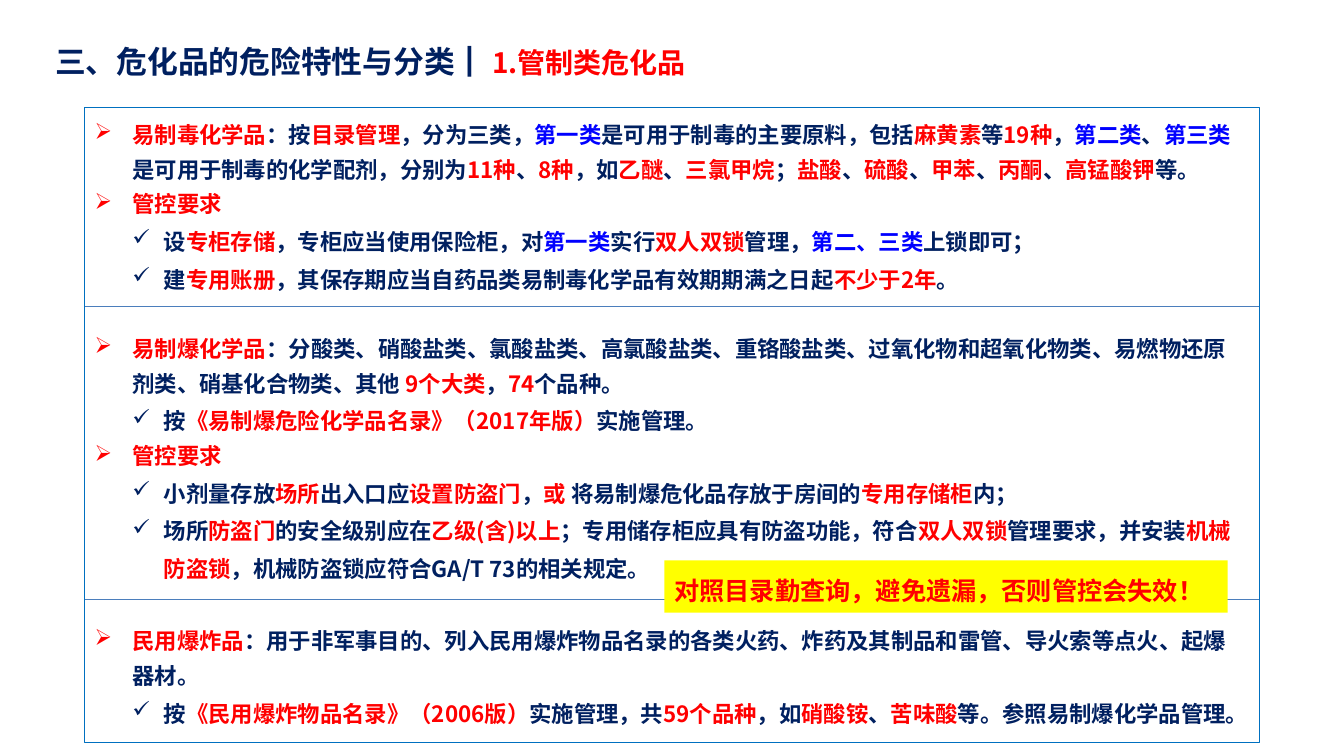
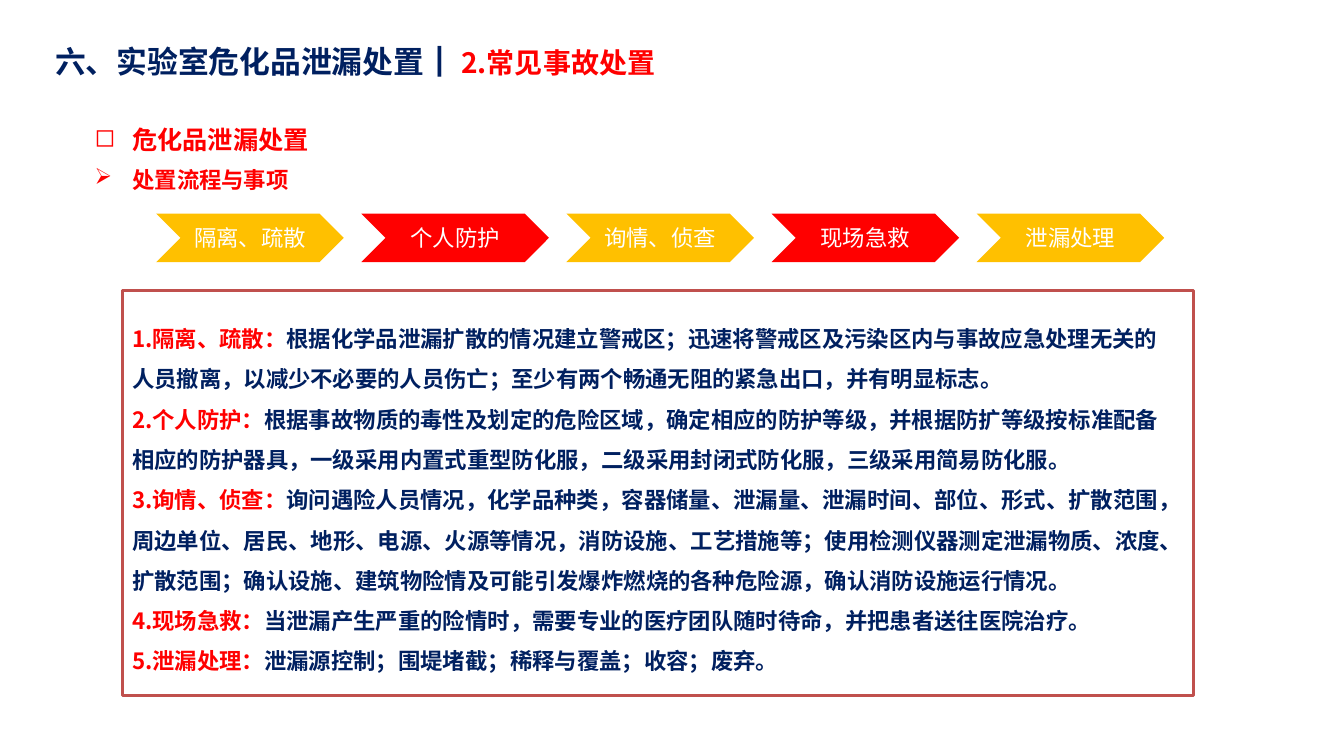
from lxml import etree
from pptx import Presentation
from pptx.dml.color import RGBColor as RGB
from pptx.enum.shapes import MSO_CONNECTOR as CONN, MSO_SHAPE as SHAPE
from pptx.enum.text import MSO_ANCHOR as ANCHOR, PP_ALIGN as ALIGN
from pptx.oxml.ns import qn
from pptx.util import Pt

C = {"navy": "002060", "red": "FF0000", "blue": "0000FF", "white": "FFFFFF",
     "gold": "FFC000", "yellow": "FFFF00", "frame": "0070C0",
     "rule": "4B7EBC", "brick": "C0504D"}
CJK = "Noto Sans CJK SC"
MARKS = {"*": "red", "+": "blue"}
# bullet level: character, left indent, hanging indent, line spacing
LEVELS = {"square": ("◻", 27, 27, 1.4), "arrow": ("➢", 27, 27, 1.3),
          "step": ("➢", 27, 27, 1.4), "check": ("✓", 49.5, 22.5, 1.4)}


def add_runs(p, text, size=16, color="navy", font=CJK, bold=True, level=None):
    """Add runs split at |; a leading * makes a run red, + makes it blue."""
    if level:
        char, left, hanging, spacing = LEVELS[level]
        pPr = p._p.get_or_add_pPr()
        pPr.set("marL", str(Pt(left)))
        pPr.set("indent", str(-Pt(hanging)))
        etree.SubElement(pPr, qn("a:buChar")).set("char", char)
        p.line_spacing = spacing
    for part in text.split("|"):
        mark = MARKS.get(part[0])
        r = p.add_run()
        r.text = part[1:] if mark else part
        r.font.size, r.font.bold, r.font.name = Pt(size), bold, font
        r.font.color.rgb = RGB.from_string(C[mark or color])
        etree.SubElement(r._r.get_or_add_rPr(), qn("a:ea")).set("typeface", CJK)


def add_box(s, x, y, w, h, kind=SHAPE.RECTANGLE, fill=None, line=None,
            width=0.75, anchor=ANCHOR.TOP):
    """Add a shape and return its text frame, left-aligned and wrapping."""
    sp = s.shapes.add_shape(kind, Pt(x), Pt(y), Pt(w), Pt(h))
    sp.shadow.inherit = False
    if fill:
        sp.fill.solid()
        sp.fill.fore_color.rgb = RGB.from_string(C[fill])
    else:
        sp.fill.background()
    if line:
        sp.line.color.rgb = RGB.from_string(C[line])
        sp.line.width = Pt(width)
    else:
        sp.line.fill.background()
    tf = sp.text_frame
    tf.word_wrap, tf.vertical_anchor = True, anchor
    tf.paragraphs[0].alignment = ALIGN.LEFT
    return tf


prs = Presentation()
prs.slide_width, prs.slide_height = Pt(960), Pt(540)

slides = []
for chapter, topic in [("三、危化品的危险特性与分类┃", "* 1.管制类危化品"),
                       ("六、实验室危化品泄漏处置┃", "* 2.常见事故处置")]:
    s = prs.slides.add_slide(prs.slide_layouts[6])
    tb = s.shapes.add_textbox(Pt(32.4), Pt(26), Pt(793.5), Pt(35.3))
    tf = tb.text_frame
    tf.word_wrap, tf.vertical_anchor = True, ANCHOR.MIDDLE
    add_runs(tf.paragraphs[0], chapter, size=22)
    add_runs(tf.paragraphs[0], topic, size=20)
    slides.append(s)
controlled, leakage = slides

# Controlled chemicals: level, space before, text
BODY_X, BODY_Y, BODY_W = 60.5, 77, 839
rules = [
    ("arrow", 0, "*易制毒化学品|：按|*目录管理|，分为三类，|+第一类|是可用于制毒的主要原料，包括|"
     "*麻黄素|等|*19种|，|+第二类|、|+第三类|是可用于制毒的化学配剂，分别为|*11种|、|*8种|，如|"
     "*乙醚|、|*三氯甲烷|；|*盐酸|、|*硫酸|、|*甲苯|、|*丙酮|、|*高锰酸钾|等。"),
    ("arrow", 0, "*管控要求"),
    ("check", 0, "设|*专柜存储|，专柜应当使用保险柜，对|+第一类|实行|*双人双锁|管理，|"
     "+第二、三类|上锁即可；"),
    ("check", 0, "建|*专用账册|，其保存期应当自药品类易制毒化学品有效期期满之日起|*不少于2年|。"),
    ("arrow", 24.5, "*易制爆化学品|：分酸类、硝酸盐类、氯酸盐类、高氯酸盐类、重铬酸盐类、"
     "过氧化物和超氧化物类、易燃物还原剂类、硝基化合物类、其他 |*9个大类|，|*74|个品种。"),
    ("check", 0, "按|*《易制爆危险化学品名录》（2017年版）|实施管理。"),
    ("arrow", 0, "*管控要求"),
    ("check", 0, "小剂量存放|*场所|出入口应|*设置防盗门|，|*或 |将易制爆危化品存放于房间的|"
     "*专用存储柜|内；"),
    ("check", 0, "场所|*防盗门|的安全级别应在|*乙级(含)以上|；专用储存柜应具有防盗功能，符合|"
     "*双人双锁|管理要求，并安装|*机械防盗锁|，机械防盗锁应符合GA/T 73的相关规定。"),
    ("arrow", 26.5, "*民用爆炸品|：用于非军事目的、列入民用爆炸物品名录的各类火药、炸药及其制品和雷管、"
     "导火索等点火、起爆器材。"),
    ("check", 0, "按|*《民用爆炸物品名录》（2006版）|实施管理，共|*59个品种|，如|*硝酸铵|、|"
     "*苦味酸|等。参照易制爆化学品管理。"),
]
tf = add_box(controlled, BODY_X, BODY_Y, BODY_W, 453.6, line="frame")
for i, (level, gap, text) in enumerate(rules):
    p = tf.add_paragraph() if i else tf.paragraphs[0]
    p.alignment = ALIGN.LEFT
    if gap:
        p.space_before = Pt(gap)
    add_runs(p, text, level=level)

for y in (219, 428.5):
    divider = controlled.shapes.add_connector(
        CONN.STRAIGHT, Pt(BODY_X), Pt(y), Pt(BODY_X + BODY_W), Pt(y))
    divider.line.color.rgb = RGB.from_string(C["rule"])
    divider.line.width = Pt(0.75)
    etree.SubElement(divider._element.spPr, qn("a:effectLst"))

p = add_box(controlled, 474.5, 400.3, 402.5, 37.4, fill="yellow").paragraphs[0]
p.line_spacing = 1.34
add_runs(p, "*对照目录勤查询，避免遗漏，否则管控会失效！", size=18, font="Calibri")

# Leakage response
tf = add_box(leakage, BODY_X, BODY_Y, BODY_W, 67.7)
add_runs(tf.paragraphs[0], "*危化品泄漏处置", size=18, font="Times New Roman", level="square")
p = tf.add_paragraph()
p.alignment = ALIGN.LEFT
add_runs(p, "*处置流程与事项", level="step")

steps = ["隔离、疏散", "个人防护", "询情、侦查", "现场急救", "泄漏处理"]
for i, step in enumerate(steps):
    tf = add_box(leakage, 111.6 + 146.5 * i, 152.6, 134, 34.6, kind=SHAPE.CHEVRON,
                 fill="red" if i % 2 else "gold", anchor=ANCHOR.MIDDLE)
    tf.paragraphs[0].alignment = ALIGN.CENTER
    add_runs(tf.paragraphs[0], step, color="white", bold=False)

details = [
    ["根据化学品泄漏扩散的情况建立警戒区；迅速将警戒区及污染区内与事故应急处理无关的",
     "人员撤离，以减少不必要的人员伤亡；至少有两个畅通无阻的紧急出口，并有明显标志。"],
    ["根据事故物质的毒性及划定的危险区域，确定相应的防护等级，并根据防扩等级按标准配备",
     "相应的防护器具，一级采用内置式重型防化服，二级采用封闭式防化服，三级采用简易防化服。"],
    ["询问遇险人员情况，化学品种类，容器储量、泄漏量、泄漏时间、部位、形式、扩散范围，",
     "周边单位、居民、地形、电源、火源等情况，消防设施、工艺措施等；使用检测仪器测定泄漏物质、浓度、"
     "扩散范围；确认设施、建筑物险情及可能引发爆炸燃烧的各种危险源，确认消防设施运行情况。"],
    ["当泄漏产生严重的险情时，需要专业的医疗团队随时待命，并把患者送往医院治疗。"],
    ["泄漏源控制；围堤堵截；稀释与覆盖；收容；废弃。"],
]
lines = []
for number, (step, (first, *rest)) in enumerate(zip(steps, details), 1):
    lines += [f"*{number}.{step}：|{first}", *rest]
tf = add_box(leakage, 87.3, 207.4, 765.5, 289.6, line="brick", width=2, anchor=ANCHOR.MIDDLE)
for i, text in enumerate(lines):
    p = tf.add_paragraph() if i else tf.paragraphs[0]
    p.alignment, p.line_spacing = ALIGN.LEFT, 1.5
    add_runs(p, text)

prs.save("out.pptx")
